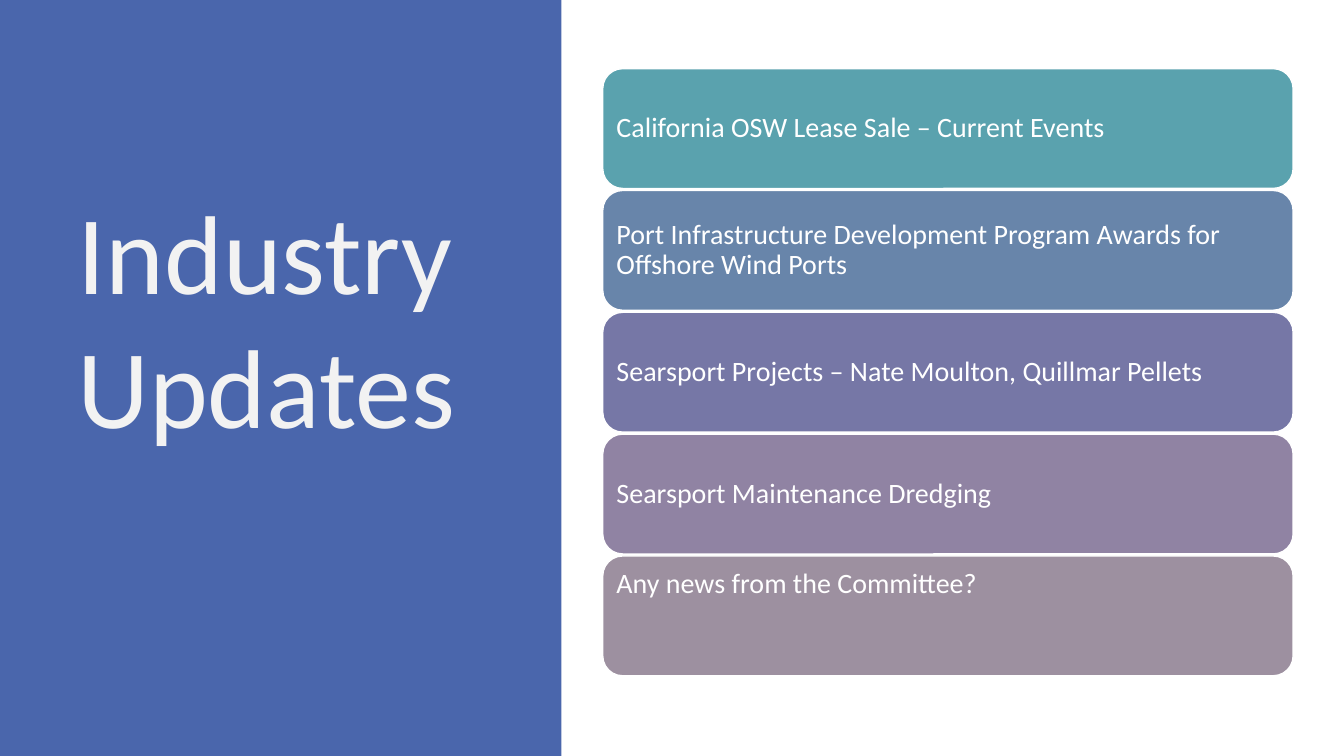
from dataclasses import dataclass

from pptx import Presentation
from pptx.dml.color import RGBColor
from pptx.enum.shapes import MSO_SHAPE as Shape
from pptx.enum.text import MSO_ANCHOR as Anchor, PP_ALIGN as Align
from pptx.util import Cm, Pt


@dataclass(frozen=True)
class Theme:
    font: str = "Calibri"
    panel: str = "4A66AC"
    title: str = "F2F2F2"
    white: str = "FFFFFF"
    cards: tuple = ("5AA2AE", "6885AA", "7677A6", "9083A3", "9D90A0")
    big: int = 80
    body: int = 20


THEME = Theme()

TOPICS = (
    "California OSW Lease Sale – Current Events",
    "Port Infrastructure Development Program Awards for Offshore Wind Ports",
    "Searsport Projects – Nate Moulton, Quillmar Pellets",
    "Searsport Maintenance Dredging",
    "Any news from the Committee?",
)


def write(shape, text, *, size, color, anchor=Anchor.TOP, space=1.0, inset=None):
    """Fill a shape's text frame; inset is one margin in cm for all sides."""
    frame = shape.text_frame
    frame.word_wrap = True
    frame.vertical_anchor = anchor
    if inset is not None:
        frame.margin_left = frame.margin_right = Cm(inset)
        frame.margin_top = frame.margin_bottom = Cm(inset)
    para = frame.paragraphs[0]
    para.text = text
    para.alignment = Align.LEFT
    para.line_spacing = space
    para.font.name = THEME.font
    para.font.size = Pt(size)
    para.font.color.rgb = RGBColor.from_string(color)


def block(slide, kind, left, top, width, height, fill, line=None):
    shape = slide.shapes.add_shape(kind, Cm(left), Cm(top), Cm(width), Cm(height))
    shape.shadow.inherit = False
    shape.fill.solid()
    shape.fill.fore_color.rgb = RGBColor.from_string(fill)
    if line:
        shape.line.color.rgb = RGBColor.from_string(line)
        shape.line.width = Pt(1)
    else:
        shape.line.fill.background()
    return shape


def panel(slide, text):
    block(slide, Shape.RECTANGLE, 0, 0, 14.15, 19.05, THEME.panel)
    box = slide.shapes.add_textbox(Cm(1.7), Cm(4.47), Cm(10.77), Cm(7.09))
    write(box, text, size=THEME.big, color=THEME.title)


def cards(slide, topics):
    """Stack one card per topic; the last one keeps its text at the top."""
    top, pitch = 1.73, 3.07
    for row, (text, fill) in enumerate(zip(topics, THEME.cards)):
        last = row == len(topics) - 1
        card = block(slide, Shape.ROUNDED_RECTANGLE, 15.19, top + row * pitch,
                     17.4, 3.02, fill, line=THEME.white)
        write(card, text, size=THEME.body, color=THEME.white, space=0.9,
              inset=0.2, anchor=Anchor.TOP if last else Anchor.MIDDLE)


def main():
    deck = Presentation()
    deck.slide_width, deck.slide_height = Cm(33.87), Cm(19.05)
    slide = deck.slides.add_slide(deck.slide_layouts[6])
    panel(slide, "Industry Updates")
    cards(slide, TOPICS)
    deck.save("out.pptx")


if __name__ == "__main__":
    main()
